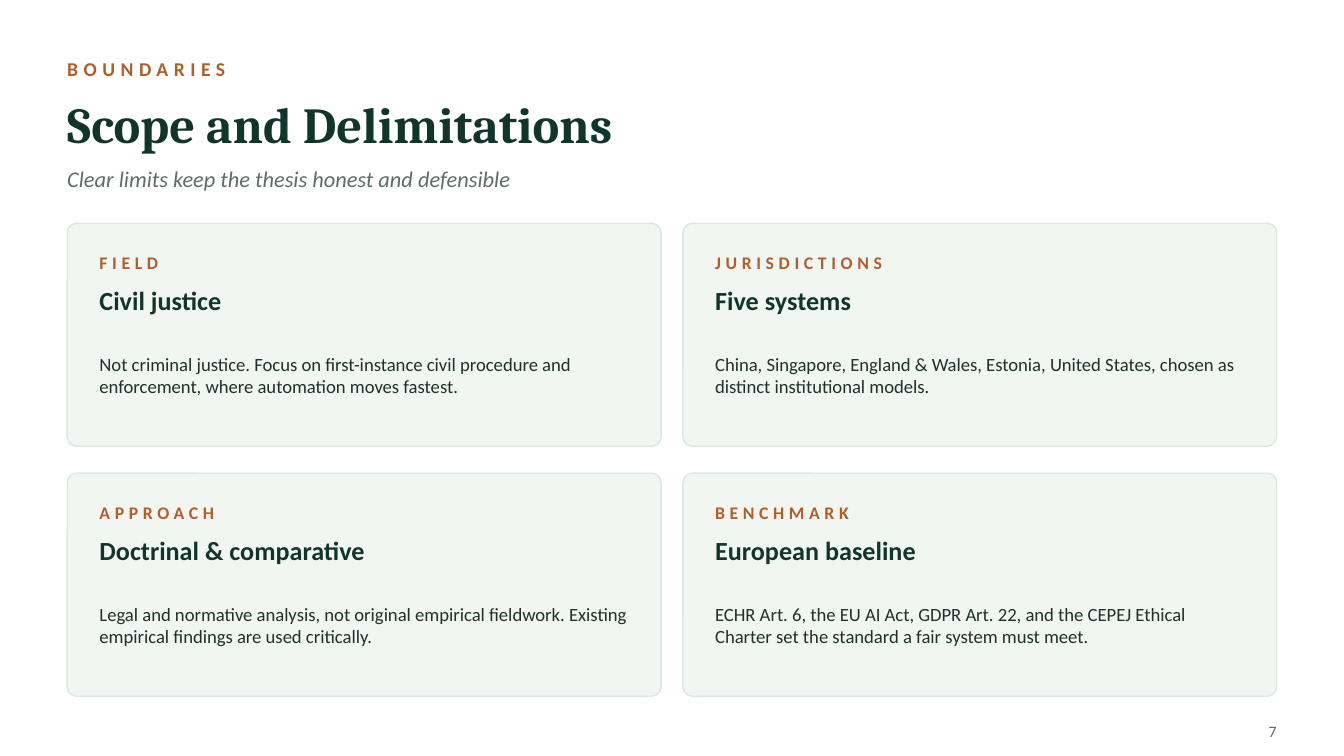
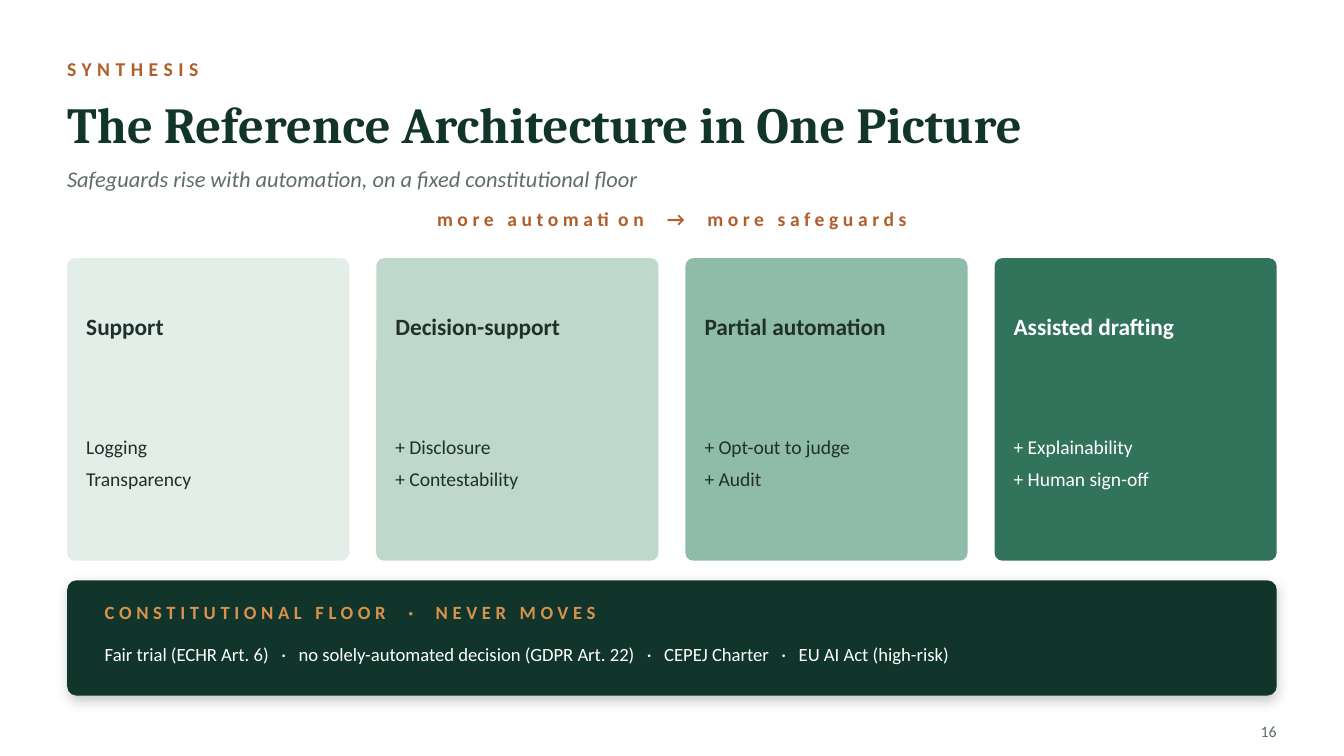
from lxml import etree
from pptx import Presentation
from pptx import util as u
from pptx.dml.color import RGBColor
from pptx.enum import shapes, text
from pptx.oxml.ns import qn

HUES = {
    "pine": "12352B", "rust": "B05E2A", "gray": "5E6E66", "ink": "20302A",
    "white": "FFFFFF", "card": "F1F6F3", "edge": "DCE7E1", "gold": "D9924C",
    "tier1": "E3EEE8", "tier2": "BFD8CC", "tier3": "8FBCA9", "tier4": "31735B",
}
BODY, HEAD = "Calibri", "Cambria"
LEFT, WIDE = 1.27, 22.86
LEFT_AL, MID_AL, RIGHT_AL = (text.PP_ALIGN.LEFT, text.PP_ALIGN.CENTER,
                             text.PP_ALIGN.RIGHT)


def hue(name):
    return RGBColor.from_string(HUES[name])


def cells(box, cols, rows, gap_x, gap_y):
    """Split a box into equal cells, row by row."""
    x, y, w, h = box
    cw = (w - gap_x * (cols - 1)) / cols
    ch = (h - gap_y * (rows - 1)) / rows
    return [(x + c * (cw + gap_x), y + r * (ch + gap_y), cw, ch)
            for r in range(rows) for c in range(cols)]


def fill_par(par, line, gap):
    """Write a line; a tuple is joined by its first item with wide gaps."""
    if isinstance(line, str):
        par.add_run().text = line
        return
    mark, *parts = line
    for i, part in enumerate(parts):
        if i:
            for bit in (" ", mark, " "):
                run = par.add_run()
                run.text = bit
                if bit == " ":
                    run.font._element.set("spc", str(round(gap * 100)))
        par.add_run().text = part


def write(shape, lines, size, color, face=BODY, bold=False, ital=False,
          track=0, align=LEFT_AL, after=0, gap=0):
    frame = shape.text_frame
    frame.word_wrap = True
    frame.auto_size = text.MSO_AUTO_SIZE.NONE
    frame.vertical_anchor = text.MSO_ANCHOR.MIDDLE
    frame.margin_left = frame.margin_right = 0
    frame.margin_top = frame.margin_bottom = 0
    for i, line in enumerate(lines):
        par = frame.add_paragraph() if i else frame.paragraphs[0]
        par.alignment = align
        if after:
            par.space_after = u.Pt(after)
        font = par.font
        font.name, font.size = face, u.Pt(size)
        font.bold, font.italic = bold, ital
        font.color.rgb = hue(color)
        if track:
            font._element.set("spc", str(round(track * 100)))
        fill_par(par, line, gap)


def label(slide, box, lines, size, color, **style):
    shape = slide.shapes.add_textbox(*map(u.Cm, box))
    write(shape, lines, size, color, **style)


def panel(slide, box, fill, edge=None, round_by=0.18):
    shape = slide.shapes.add_shape(shapes.MSO_SHAPE.ROUNDED_RECTANGLE,
                                   *map(u.Cm, box))
    shape.adjustments[0] = round_by / min(box[2:])
    shape.shadow.inherit = False
    shape.fill.solid()
    shape.fill.fore_color.rgb = hue(fill)
    if edge:
        shape.line.color.rgb = hue(edge)
        shape.line.width = u.Pt(0.75)
    else:
        shape.line.fill.background()
    return shape


def shade(shape):
    """Soft shadow straight below a shape."""
    group = shape._element.spPr.find(qn("a:effectLst"))
    outer = etree.SubElement(group, qn("a:outerShdw"), blurRad=str(u.Pt(7)),
                             dist=str(u.Pt(2)), dir="5400000",
                             algn="bl", rotWithShape="0")
    color = etree.SubElement(outer, qn("a:srgbClr"), val="000000")
    etree.SubElement(color, qn("a:alpha"), val="22000")


def start(deck, kicker, title, sub, num):
    """Add a slide with its heading and page number."""
    slide = deck.slides.add_slide(deck.slide_layouts[5])
    label(slide, (LEFT, 0.97, WIDE, 0.66), [kicker], 10.5, "rust",
          bold=True, track=3)
    head = slide.shapes.title
    head.left, head.top, head.width, head.height = map(
        u.Cm, (LEFT, 1.68, WIDE, 1.32))
    write(head, [title], 27, "pine", face=HEAD, bold=True)
    label(slide, (LEFT, 3, WIDE, 0.76), [sub], 12, "gray", ital=True)
    label(slide, (LEFT + WIDE - 1.02, 13.54, 1.02, 0.56), [num], 8.5, "gray",
          align=RIGHT_AL)
    return slide


def card(slide, box, tag, name, note):
    panel(slide, box, "card", "edge")
    x, y, w = box[0] + 0.61, box[1], box[2] - 1.22
    label(slide, (x, y + 0.46, w, 0.56), [tag], 9.5, "rust",
          bold=True, track=2.5)
    label(slide, (x, y + 1.07, w, 0.76), [name], 14, "pine", bold=True)
    label(slide, (x, y + 1.93, w, 1.88), [note], 10, "ink")


def tier(slide, box, fill, color, name, items):
    panel(slide, box, fill, round_by=0.15)
    x, y, w = box[0] + 0.36, box[1], box[2] - 0.72
    label(slide, (x, y + 0.51, w, 1.57), [name], 12.5, color, bold=True)
    label(slide, (x, y + 2.34, w, 3.05), items, 10.5, color, after=5)


def floor(slide, box, head, rules):
    shade(panel(slide, box, "pine"))
    x, y, w = box[0] + 0.71, box[1], box[2] - 1.52
    label(slide, (x, y + 0.3, w, 0.61), [head], 10, "gold",
          bold=True, track=2.5, gap=7.3)
    label(slide, (x, y + 1.02, w, 0.76), [rules], 10, "white", gap=4.5)


def scope(deck):
    slide = start(deck, "BOUNDARIES", "Scope and Delimitations",
                  "Clear limits keep the thesis honest and defensible", "7")
    cards = [
        ("FIELD", "Civil justice",
         "Not criminal justice. Focus on first-instance civil procedure and "
         "enforcement, where automation moves fastest."),
        ("JURISDICTIONS", "Five systems",
         "China, Singapore, England & Wales, Estonia, United States, chosen "
         "as distinct institutional models."),
        ("APPROACH", "Doctrinal & comparative",
         "Legal and normative analysis, not original empirical fieldwork. "
         "Existing empirical findings are used critically."),
        ("BENCHMARK", "European baseline",
         "ECHR Art. 6, the EU AI Act, GDPR Art. 22, and the CEPEJ Ethical "
         "Charter set the standard a fair system must meet."),
    ]
    grid = cells((LEFT, 4.22, WIDE, 8.94), 2, 2, 0.41, 0.51)
    for box, parts in zip(grid, cards):
        card(slide, box, *parts)


def model(deck):
    slide = start(deck, "SYNTHESIS",
                  "The Reference Architecture in One Picture",
                  "Safeguards rise with automation, on a fixed "
                  "constitutional floor", "16")
    # Direction of travel
    label(slide, (LEFT, 3.81, WIDE, 0.66),
          [("→", "more automation", "more safeguards")], 10.5, "rust",
          bold=True, track=2.5, align=MID_AL, gap=7.3)
    # Tiers, from light to dark
    tiers = [
        ("tier1", "ink", "Support", ["Logging", "Transparency"]),
        ("tier2", "ink", "Decision-support",
         ["+ Disclosure", "+ Contestability"]),
        ("tier3", "ink", "Partial automation",
         ["+ Opt-out to judge", "+ Audit"]),
        ("tier4", "white", "Assisted drafting",
         ["+ Explainability", "+ Human sign-off"]),
    ]
    row = cells((LEFT, 4.88, WIDE, 5.72), 4, 1, 0.51, 0)
    for box, parts in zip(row, tiers):
        tier(slide, box, *parts)
    # Fixed base
    floor(slide, (LEFT, 10.97, WIDE, 2.18),
          ("·", "CONSTITUTIONAL FLOOR", "NEVER MOVES"),
          ("·", "Fair trial (ECHR Art. 6)",
           "no solely-automated decision (GDPR Art. 22)",
           "CEPEJ Charter", "EU AI Act (high-risk)"))


def main():
    deck = Presentation()
    deck.slide_width, deck.slide_height = u.Cm(25.4), u.Cm(14.29)
    scope(deck)
    model(deck)
    deck.save("out.pptx")


if __name__ == "__main__":
    main()
